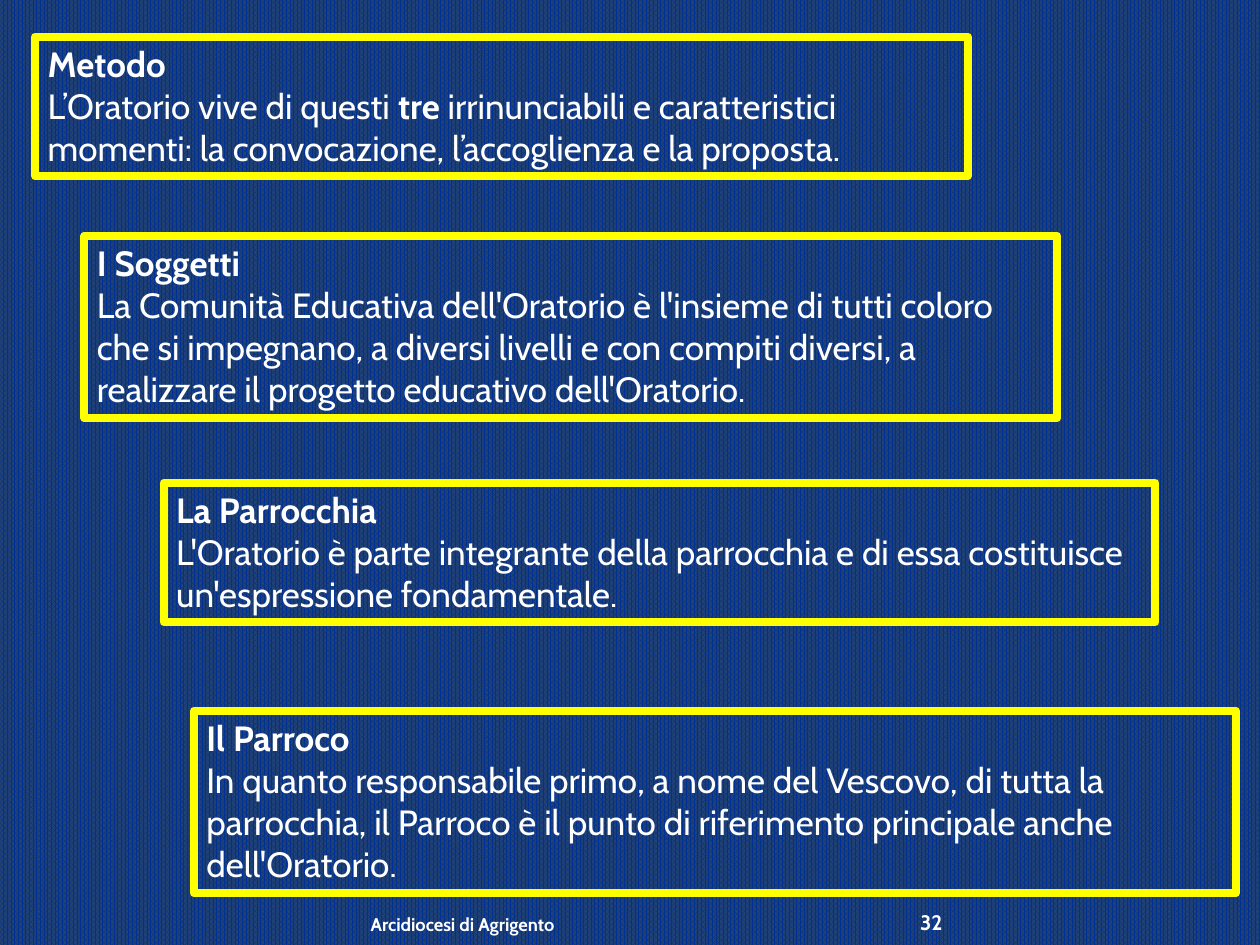
from pptx import Presentation
from pptx.dml.color import RGBColor
from pptx.enum.dml import MSO_PATTERN
from pptx.enum.text import MSO_ANCHOR, MSO_AUTO_SIZE, PP_ALIGN
from pptx.util import Inches, Pt

SECTIONS = [
    (0.28, 0.29, 7.4, 1.11, "Metodo",
     ["L’Oratorio vive di questi ", "tre",
      " irrinunciabili e caratteristici momenti: la convocazione, "
      "l’accoglienza e la proposta."]),
    (0.67, 1.87, 7.72, 1.45, "I Soggetti",
     ["La Comunità Educativa dell'Oratorio è l'insieme di tutti coloro che si "
      "impegnano, a diversi livelli e con compiti diversi, a realizzare il "
      "progetto educativo dell'Oratorio."]),
    (1.3, 3.83, 7.87, 1.11, "La Parrocchia",
     ["L'Oratorio è parte integrante della parrocchia e di essa costituisce "
      "un'espressione fondamentale."]),
    (1.54, 5.64, 8.27, 1.45, "Il Parroco",
     ["In quanto responsabile primo, a nome del Vescovo, di tutta la "
      "parrocchia, il Parroco è il punto di riferimento principale anche "
      "dell'Oratorio."]),
]


def color(hex_value):
    return RGBColor.from_string(hex_value)


class SlideBuilder:
    FONT = "Cabin"
    TEXT = "FFFFFF"
    FRAME = "FFFF00"

    def __init__(self, slide):
        self.slide = slide

    def background(self, foreground, background):
        fill = self.slide.background.fill
        fill.patterned()
        fill.pattern = MSO_PATTERN.PERCENT_80
        fill.fore_color.rgb = color(foreground)
        fill.back_color.rgb = color(background)

    def text_box(self, left, top, width, height):
        shape = self.slide.shapes.add_textbox(
            Inches(left), Inches(top), Inches(width), Inches(height))
        shape.text_frame.word_wrap = True
        return shape

    def format_run(self, run, size, bold):
        run.font.name = self.FONT
        run.font.size = Pt(size)
        run.font.bold = bold
        run.font.color.rgb = color(self.TEXT)

    def section(self, left, top, width, height, heading, pieces):
        """Framed box; every second piece of the body is bold."""
        shape = self.text_box(left, top, width, height)
        shape.line.color.rgb = color(self.FRAME)
        shape.line.width = Pt(4.5)
        frame = shape.text_frame
        frame.auto_size = MSO_AUTO_SIZE.SHAPE_TO_FIT_TEXT
        frame.text = heading
        self.format_run(frame.paragraphs[0].runs[0], 20, True)
        body = frame.add_paragraph()
        for index, piece in enumerate(pieces):
            run = body.add_run()
            run.text = piece
            self.format_run(run, 20, index % 2 == 1)

    def footer(self, left, width, text, size, side_margin):
        frame = self.text_box(left, 7.17, width, 0.25).text_frame
        frame.margin_left = frame.margin_right = Inches(side_margin)
        frame.margin_top = frame.margin_bottom = 0
        frame.vertical_anchor = MSO_ANCHOR.BOTTOM
        frame.text = text
        paragraph = frame.paragraphs[0]
        paragraph.alignment = PP_ALIGN.RIGHT
        self.format_run(paragraph.runs[0], size, True)


def main():
    presentation = Presentation()
    presentation.slide_width = Inches(10)
    presentation.slide_height = Inches(7.5)
    blank_layout = presentation.slide_layouts[6]
    builder = SlideBuilder(presentation.slides.add_slide(blank_layout))
    builder.background("003192", "234271")
    for section in SECTIONS:
        builder.section(*section)
    builder.footer(6.84, 0.64, "32", 12, 0)
    builder.footer(0.5, 4, "Arcidiocesi di Agrigento", 10.5, 0.1)
    presentation.save("out.pptx")


if __name__ == "__main__":
    main()
